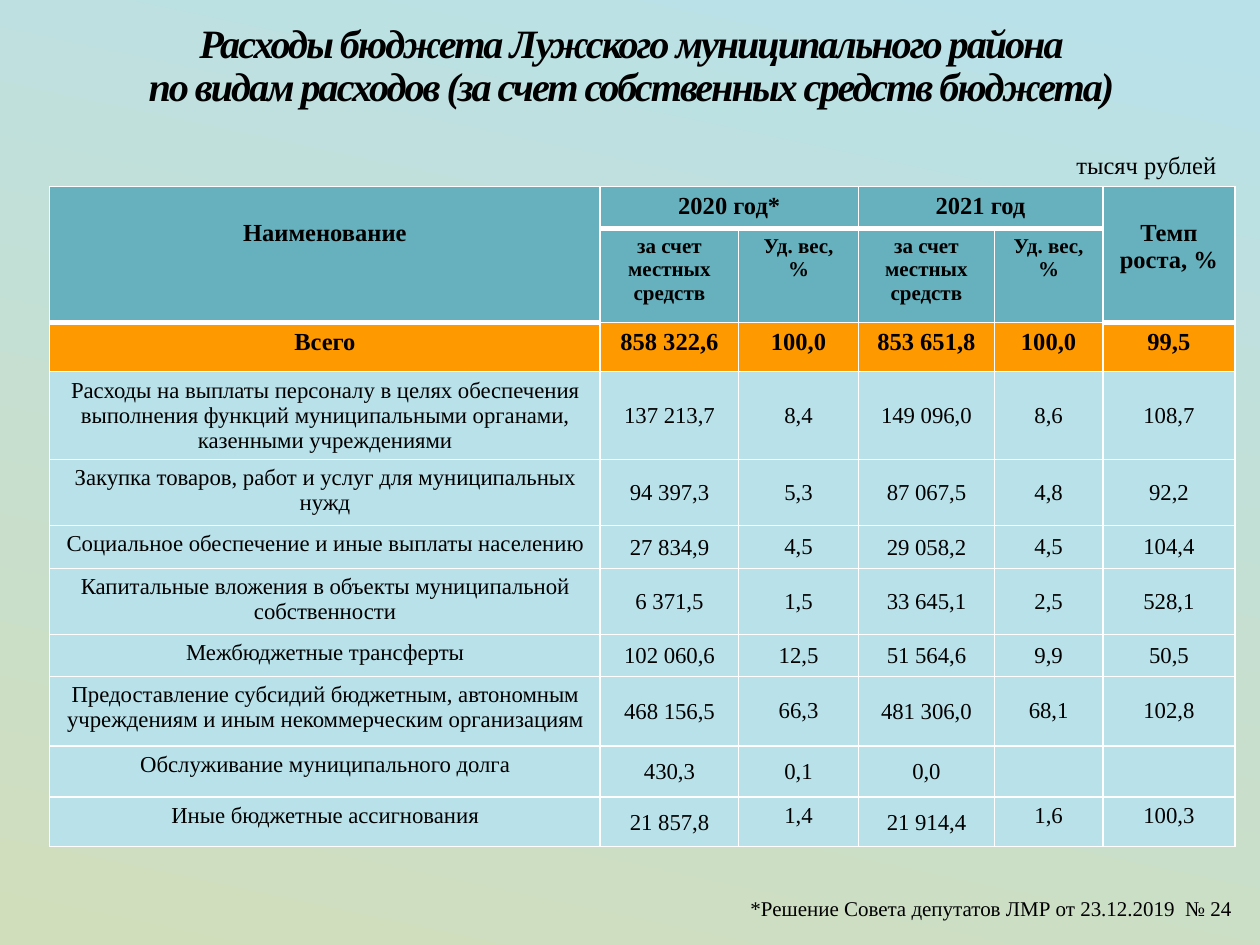
from dataclasses import dataclass
from lxml.etree import SubElement
from pptx import Presentation
from pptx.dml.color import RGBColor
from pptx.enum.text import MSO_ANCHOR, MSO_AUTO_SIZE, PP_ALIGN
from pptx.oxml.ns import qn
from pptx.util import Cm, Pt


@dataclass(frozen=True)
class Theme:
    font: str = "Times New Roman"
    ink: str = "000000"
    line: str = "FFFFFF"
    head: str = "66B1BD"
    total: str = "FF9900"
    body: str = "B9E1E9"
    sky: str = "B9E1E9"
    grass: str = "D1DEBC"
    title: float = 23
    large: float = 14
    mid: float = 13
    small: float = 12
    thin: float = 1
    thick: float = 3


THEME = Theme()
COLS = [4.37, 1.1, 0.95, 1.08, 0.86, 1.05]
ROWS = [0.33, 0.74, 0.39, 0.69, 0.52, 0.34, 0.52, 0.33, 0.55, 0.39, 0.39]
MERGES = [(0, 0, 1, 0), (0, 1, 0, 2), (0, 3, 0, 4), (0, 5, 1, 5)]
TALL = (0, 5)
DATA = [
    ["Наименование", "2020 год*", "", "2021 год", "", "Темп роста, %"],
    ["", "за счет местных средств", "Уд. вес,\n%",
     "за счет местных средств", "Уд. вес, %", ""],
    ["Всего", "858 322,6", "100,0", "853 651,8", "100,0", "99,5"],
    ["Расходы на выплаты персоналу в целях обеспечения выполнения функций "
     "муниципальными органами, казенными учреждениями",
     "137 213,7", "8,4", "149 096,0", "8,6", "108,7"],
    ["Закупка товаров, работ и услуг для муниципальных нужд",
     "94 397,3", "5,3", "87 067,5", "4,8", "92,2"],
    ["Социальное обеспечение и иные выплаты населению",
     "27 834,9", "4,5", "29 058,2", "4,5", "104,4"],
    ["Капитальные вложения в объекты муниципальной собственности",
     "6 371,5", "1,5", "33 645,1", "2,5", "528,1"],
    ["Межбюджетные трансферты", "102 060,6", "12,5", "51 564,6", "9,9", "50,5"],
    ["Предоставление субсидий бюджетным, автономным учреждениям "
     "и иным некоммерческим организациям",
     "468 156,5", "66,3", "481 306,0", "68,1", "102,8"],
    ["Обслуживание муниципального долга", "430,3", "0,1", "0,0", "", ""],
    ["Иные бюджетные ассигнования", "21 857,8", "1,4", "21 914,4", "1,6", "100,3"],
]


def apply(item, values):
    for name, value in values.items():
        setattr(item, name, value)


def write(frame, text, size, align=PP_ALIGN.CENTER, **style):
    frame.text = text
    for para in frame.paragraphs:
        para.alignment = align
        for run in para.runs:
            apply(run.font, {"name": THEME.font, "size": Pt(size), **style})
            run.font.color.rgb = RGBColor.from_string(THEME.ink)


def paint(slide):
    fill = slide.background.fill
    fill.gradient()
    fill.gradient_angle = 258
    for stop, place, color in zip(fill.gradient_stops, (0.02, 1), (THEME.sky, THEME.grass)):
        stop.position = place
        stop.color.rgb = RGBColor.from_string(color)


def add_title(slide, box):
    shape = slide.shapes.title
    apply(shape, dict(zip(("left", "top", "width", "height"), box)))
    frame = shape.text_frame
    apply(frame, {"word_wrap": True, "auto_size": MSO_AUTO_SIZE.NONE,
                  "vertical_anchor": MSO_ANCHOR.MIDDLE})
    write(frame, "Расходы бюджета Лужского муниципального района \v"
          "по видам расходов (за счет собственных средств бюджета) ",
          THEME.title, bold=True, italic=True)
    para = frame.paragraphs[0]
    para.line_spacing = 0.9
    for run in para.runs:
        run.font._element.set("spc", "-120")


def add_note(slide, box, text, size, align):
    frame = slide.shapes.add_textbox(*box).text_frame
    frame.word_wrap = True
    write(frame, text, size, align)


def is_thick(row, col):
    return row == 0 or (row == 1 and col in TALL)


def edge(cell, row, col):
    props = cell._tc.get_or_add_tcPr()
    sides = {"L": False, "R": False, "T": row > 0 and is_thick(row - 1, col),
             "B": is_thick(row, col)}
    for side, bold in sides.items():
        width = Pt(THEME.thick if bold else THEME.thin)
        line = SubElement(props, qn(f"a:ln{side}"), w=str(width))
        fill = SubElement(line, qn("a:solidFill"))
        SubElement(fill, qn("a:srgbClr"), val=THEME.line)


def style_cell(cell, row, col, text):
    edge(cell, row, col)
    cell.fill.solid()
    color = THEME.head if row < 2 else THEME.total if row == 2 else THEME.body
    cell.fill.fore_color.rgb = RGBColor.from_string(color)
    size = THEME.small if row == 1 else THEME.mid if row > 2 else THEME.large
    if text:
        write(cell.text_frame, text, size, bold=row < 3)
    if row == 0 and col in TALL:
        cell.margin_top = Cm(0.67)
    if row > 2 and col in (1, 3):
        apply(cell, {"margin_left": Cm(0.02), "margin_right": Cm(0.02),
                     "margin_top": Cm(0.02), "margin_bottom": 0})
    centred = row > 2 and col > 0 and (row < len(ROWS) - 1 or col in (1, 3))
    cell.vertical_anchor = MSO_ANCHOR.MIDDLE if centred else MSO_ANCHOR.TOP


def add_grid(slide, box):
    table = slide.shapes.add_table(len(ROWS), len(COLS), *box).table
    table.horz_banding = False
    for col, share in zip(table.columns, COLS):
        col.width = int(box[2] * share / sum(COLS))
    for row, share in zip(table.rows, ROWS):
        row.height = int(box[3] * share / sum(ROWS))
    for top, left, low, right in MERGES:
        table.cell(top, left).merge(table.cell(low, right))
    for row, texts in enumerate(DATA):
        for col, text in enumerate(texts):
            style_cell(table.cell(row, col), row, col, text)


def area(*sizes):
    return [Cm(size) for size in sizes]


def main():
    deck = Presentation()
    apply(deck, {"slide_width": Cm(25.4), "slide_height": Cm(19.05)})
    slide = deck.slides.add_slide(deck.slide_layouts[5])
    paint(slide)
    add_title(slide, area(1.5, 0.53, 22.63, 1.65))
    add_grid(slide, area(1, 3.76, 23.9, 13.28))
    add_note(slide, area(14.88, 17.93, 10.52, 0.77),
             "*Решение Совета депутатов ЛМР от 23.12.2019  № 24",
             THEME.small, PP_ALIGN.LEFT)
    add_note(slide, area(21.31, 2.9, 3.6, 0.85), "тысяч рублей",
             THEME.large, PP_ALIGN.CENTER)
    deck.save("out.pptx")


if __name__ == "__main__":
    main()
